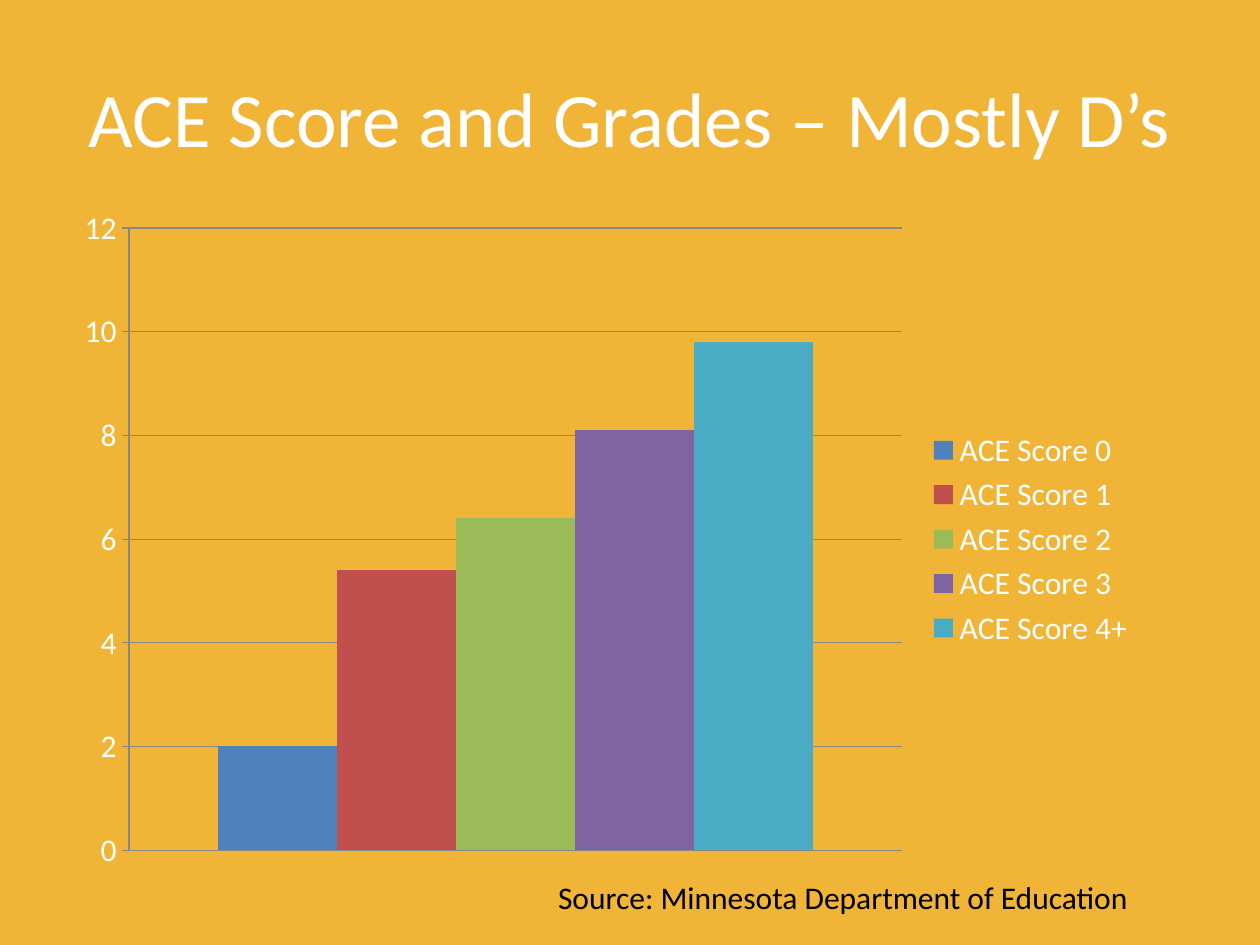
from pptx import Presentation
from pptx.chart.data import CategoryChartData
from pptx.dml.color import RGBColor
from pptx.enum.chart import XL_CHART_TYPE, XL_LEGEND_POSITION, XL_TICK_MARK
from pptx.enum.text import MSO_ANCHOR, PP_ALIGN
from pptx.util import Pt

FONT = "Calibri"
WHITE, BLACK, GOLD, GRAY = "FFFFFF", "000000", "F0B537", "878787"
SCORES = [
    ("ACE Score 0", 2, "4F81BD"),
    ("ACE Score 1", 5.4, "C0504D"),
    ("ACE Score 2", 6.4, "9BBB59"),
    ("ACE Score 3", 8.1, "8064A2"),
    ("ACE Score 4+", 9.8, "4BACC6"),
]


def tint(target, color):
    target.rgb = RGBColor.from_string(color)


def apply(target, values):
    for name, value in values.items():
        setattr(target, name, value)


class Deck:
    """Holds the style and the current slide."""

    def __init__(self, width, height):
        self.file = Presentation()
        apply(self.file, {"slide_width": Pt(width), "slide_height": Pt(height)})
        self.slide = self.file.slides.add_slide(self.file.slide_layouts[6])
        fill = self.slide.background.fill
        fill.solid()
        tint(fill.fore_color, GOLD)

    def style(self, font, size, color):
        apply(font, {"name": FONT, "size": Pt(size)})
        tint(font.color, color)

    def text(self, words, box, size, color, frame, align):
        shape = self.slide.shapes.add_textbox(*map(Pt, box))
        apply(shape.text_frame, frame)
        para = shape.text_frame.paragraphs[0]
        para.alignment = align
        run = para.add_run()
        run.text = words
        self.style(run.font, size, color)

    def chart(self, rows, box):
        data = CategoryChartData()
        data.categories = ["1"]
        for name, value, _ in rows:
            data.add_series(name, [value])
        chart = self.slide.shapes.add_chart(
            XL_CHART_TYPE.COLUMN_CLUSTERED, *map(Pt, box), data).chart
        self.style(chart.font, 18, WHITE)
        apply(chart, {"has_title": False, "has_legend": True})
        apply(chart.legend, {"position": XL_LEGEND_POSITION.RIGHT,
                             "include_in_layout": False})
        plot = chart.plots[0]
        apply(plot, {"gap_width": 150, "overlap": 0, "vary_by_categories": False})
        for series, (_, _, color) in zip(plot.series, rows):
            series.format.fill.solid()
            tint(series.format.fill.fore_color, color)
        chart.category_axis.visible = False
        axis = chart.value_axis
        apply(axis, {"minimum_scale": 0, "maximum_scale": 12, "major_unit": 2,
                     "has_major_gridlines": True,
                     "major_tick_mark": XL_TICK_MARK.OUTSIDE,
                     "minor_tick_mark": XL_TICK_MARK.NONE})
        for part in (axis, axis.major_gridlines):
            part.format.line.width = Pt(0.75)
            tint(part.format.line.color, GRAY)


def main():
    deck = Deck(720, 540)
    deck.text("ACE Score and Grades – Mostly D’s", (36, 21.6, 648, 90), 44, WHITE,
              {"word_wrap": True, "vertical_anchor": MSO_ANCHOR.MIDDLE},
              PP_ALIGN.CENTER)
    deck.chart(SCORES, (36, 111.6, 620, 393))
    deck.text("Source: Minnesota Department of Education", (311.8, 498.2, 344, 29),
              18, BLACK, {"word_wrap": False}, PP_ALIGN.LEFT)
    deck.file.save("out.pptx")


if __name__ == "__main__":
    main()
